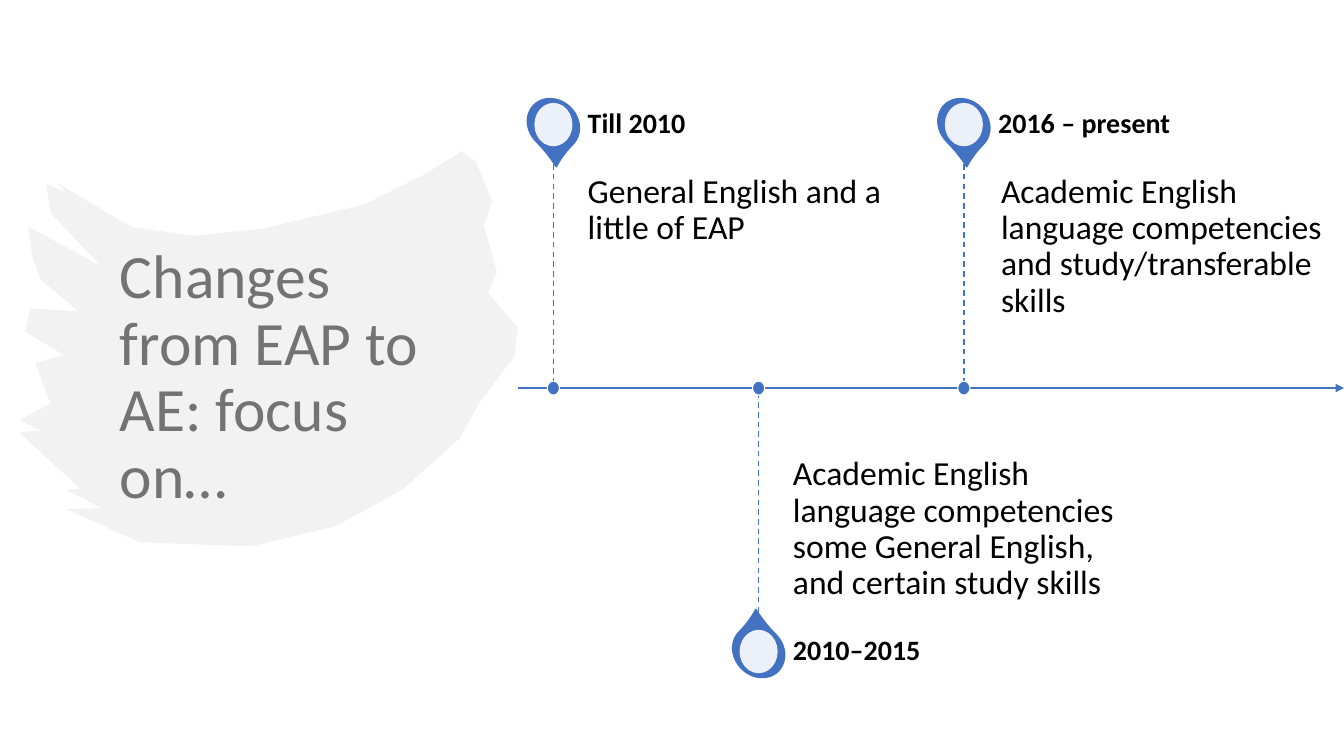
from lxml.etree import SubElement
from pptx import Presentation
from pptx.dml.color import RGBColor
from pptx.enum.dml import MSO_LINE
from pptx.enum.shapes import MSO_CONNECTOR, MSO_SHAPE
from pptx.enum.text import MSO_ANCHOR, MSO_AUTO_SIZE, PP_ALIGN
from pptx.oxml.ns import qn
from pptx.util import Pt

BLUE, WHITE, BLACK, GREY = "4372C3", "FFFFFF", "000000", "E7E6E6"
AXIS_TOP, AXIS_LEFT, AXIS_RIGHT = 277.2, 370, 960
FIRST_STOP, STOP_GAP = 395.3, 146.6
PIN_REACH, STEM = 188.2, 160
BRUSH_UNIT = 0.72

STOPS = [
    ("Till 2010", "General English and a little of EAP", -1, 24.5),
    ("2010–2015", "Academic English language competencies some General English, "
     "and certain study skills", 1, 24.5),
    ("2016 – present", "Academic English language competencies and "
     "study/transferable skills", -1, 26.5),
]

BRUSH = [
    (458, 150), (472, 160), (488, 200), (480, 224), (493, 270), (484, 290),
    (514, 325), (510, 354), (476, 399), (456, 435), (399, 486), (333, 522),
    (249, 542), (139, 538), (66, 505), (100, 504), (66, 486), (80, 485),
    (19, 429), (40, 427), (20, 417), (50, 400), (35, 360), (63, 352),
    (25, 329), (30, 306), (78, 309), (40, 277), (32, 254), (28, 225),
    (100, 264), (50, 211), (46, 182), (65, 191), (58, 182), (130, 225),
    (192, 234), (260, 227), (361, 203), (423, 172),
]


def hue(code):
    """Turn a hex string into a colour."""
    return RGBColor.from_string(code)


def assign(target, **values):
    """Set each named attribute on the target."""
    for name, value in values.items():
        setattr(target, name, value)


def paint(shape, color, opacity=100, edge=None, weight=1):
    """Give a shape its fill, opacity and outline, without a shadow."""
    shape.shadow.inherit = False
    shape.fill.solid()
    shape.fill.fore_color.rgb = hue(color)
    if opacity < 100:
        tint = shape.element.spPr.find(qn("a:solidFill"))[0]
        SubElement(tint, qn("a:alpha"), val=str(opacity * 1000))
    if edge:
        shape.line.color.rgb = hue(edge)
        shape.line.width = Pt(weight)
    else:
        shape.line.fill.background()


def add_centered(page, kind, center, middle, width, height):
    """Add a preset shape around a centre point."""
    return page.shapes.add_shape(kind, Pt(center - width / 2), Pt(middle - height / 2),
                                 Pt(width), Pt(height))


def add_rule(page, start, end, weight, dashed=False, arrow=False):
    """Add a straight blue line between two points."""
    rule = page.shapes.add_connector(MSO_CONNECTOR.STRAIGHT, *map(Pt, start + end))
    rule.line.color.rgb = hue(BLUE)
    rule.line.width = Pt(weight)
    if dashed:
        rule.line.dash_style = MSO_LINE.DASH
    outline = rule.element.spPr
    if arrow:
        SubElement(outline.find(qn("a:ln")), qn("a:tailEnd"), type="triangle")
    SubElement(outline, qn("a:effectLst"))


def write(box, text, size, anchor, margins, bold=False):
    """Put formatted text into a box with left, top, right, bottom margins."""
    frame = box.text_frame
    left, top, right, bottom = map(Pt, margins)
    assign(frame, word_wrap=True, auto_size=MSO_AUTO_SIZE.NONE, vertical_anchor=anchor,
           margin_left=left, margin_top=top, margin_right=right, margin_bottom=bottom)
    para = frame.paragraphs[0]
    assign(para, alignment=PP_ALIGN.LEFT, line_spacing=0.9)
    span = para.add_run()
    span.text = text
    assign(span.font, name="Calibri", size=Pt(size), bold=bold)
    span.font.color.rgb = hue(BLACK)


def add_words(page, left, top, height, *style, **options):
    """Add a timeline text box."""
    box = page.shapes.add_textbox(Pt(left), Pt(top), Pt(245.5), Pt(height))
    write(box, *style, **options)


def add_brush(page):
    """Add the pale brush stroke behind the title."""
    builder = page.shapes.build_freeform(*BRUSH[0], scale=Pt(1) * BRUSH_UNIT)
    builder.add_line_segments(BRUSH[1:], close=True)
    paint(builder.convert_to_shape(), GREY, opacity=50)


def add_title(page):
    """Fill and place the title placeholder."""
    title = page.shapes.title
    assign(title, left=Pt(78.5), top=Pt(54), width=Pt(235.5), height=Pt(432.7))
    write(title, "Changes from EAP to AE: focus on…", 44, MSO_ANCHOR.MIDDLE,
          (7.2, 3.6, 7.2, 3.6))


def add_stop(page, center, date, focus, side, indent):
    """Add one period: pin, texts, stem and dot, above (-1) or below (1) the axis."""
    above = side < 0
    middle = AXIS_TOP + side * PIN_REACH
    pin = add_centered(page, MSO_SHAPE.TEAR, center, middle, 34.6, 39.6)
    pin.adjustments[0] = 1.15
    pin.rotation = 135 if above else 315
    paint(pin, BLUE, edge=BLUE)
    paint(add_centered(page, MSO_SHAPE.OVAL, center, middle, 27.2, 31), WHITE, opacity=90)
    add_words(page, center + indent, AXIS_TOP - STEM if above else AXIS_TOP, STEM,
              focus, 24, MSO_ANCHOR.TOP if above else MSO_ANCHOR.BOTTOM,
              (0, 7.2, 7.2, 11.5) if above else (0, 11.5, 0, 7.2))
    add_words(page, center + 24.5, middle - 28, 56, date, 20, MSO_ANCHOR.MIDDLE,
              (0, 0, 10, 0), bold=True)
    add_rule(page, (center, AXIS_TOP + side * STEM), (center, AXIS_TOP), 1, dashed=True)
    dot = add_centered(page, MSO_SHAPE.OVAL, center, AXIS_TOP, 8.8, 10)
    paint(dot, BLUE, edge=WHITE, weight=0.75)


def main():
    """Build and save the timeline slide."""
    deck = Presentation()
    assign(deck, slide_width=Pt(960), slide_height=Pt(540))
    page = deck.slides.add_slide(deck.slide_layouts.get_by_name("Title Only"))
    add_brush(page)
    add_title(page)
    add_rule(page, (AXIS_LEFT, AXIS_TOP), (AXIS_RIGHT, AXIS_TOP), 1.5, arrow=True)
    for index, stop in enumerate(STOPS):
        add_stop(page, FIRST_STOP + index * STOP_GAP, *stop)
    deck.save("out.pptx")


if __name__ == "__main__":
    main()
